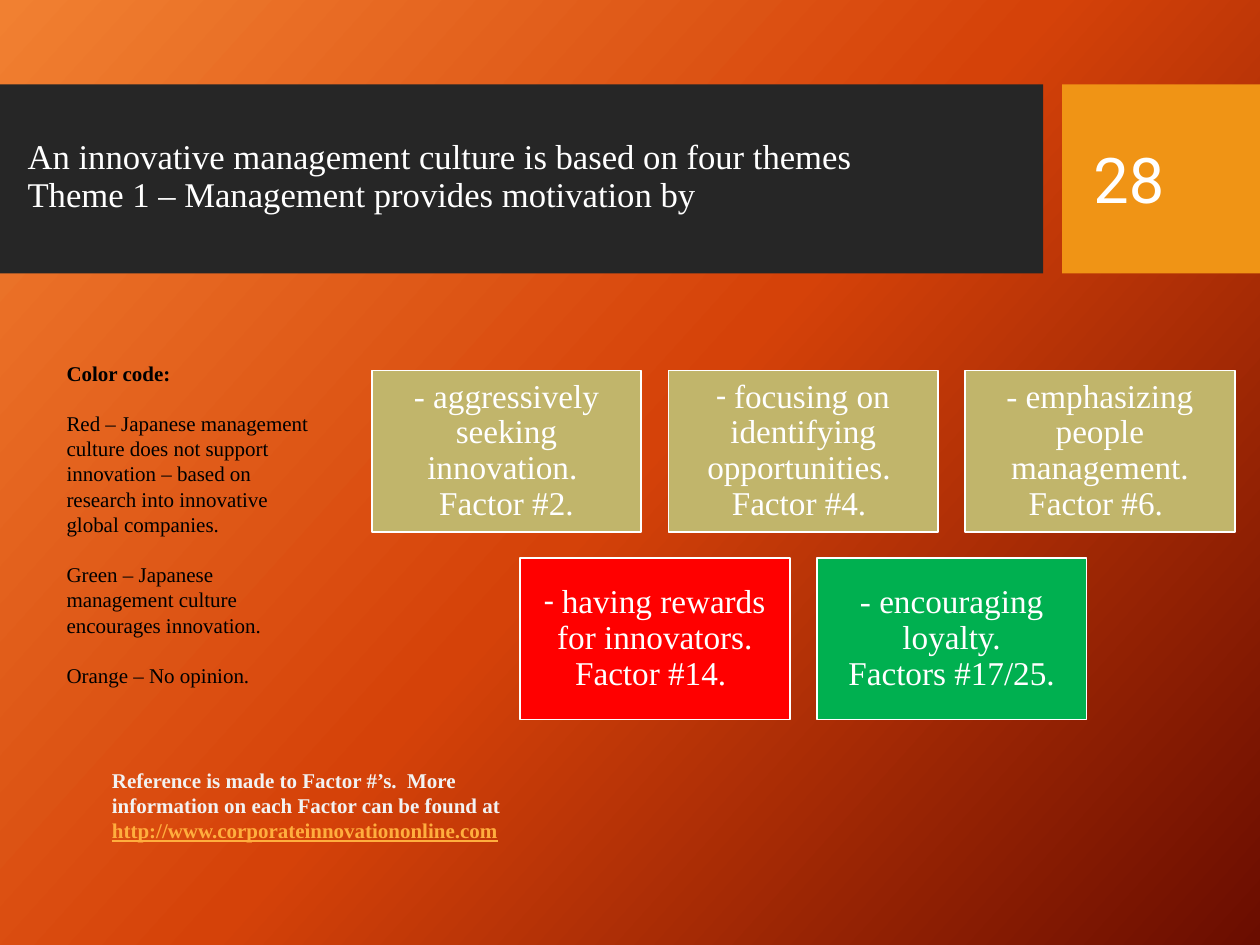
from copy import deepcopy
from pptx import Presentation
from pptx.dml.color import RGBColor
from pptx.enum.shapes import MSO_SHAPE
from pptx.enum.text import MSO_ANCHOR, PP_ALIGN
from pptx.util import Inches, Pt

# Content: a paragraph is a list of (text, style) runs
TITLE = [[("An innovative management culture is based on four themes\n"
           "Theme 1 – Management provides motivation by", "title")]]
NUMBER = [[("28", "number")]]
CODES = [
    [("Color code:", "head")],
    [("Red – Japanese management culture does not support innovation – "
      "based on research into innovative global companies.", "code")],
    [("Green – Japanese management culture encourages innovation.", "code")],
    [("Orange – No opinion.", "code")],
]
NOTE = [
    [("Reference is made to Factor #’s.  More information on each "
      "Factor can be found at", "note")],
    [("http://www.corporateinnovationonline.com", "web")],
]
FACTORS = [  # rows of (fill, dash style, text)
    [("neutral", "card", "aggressively seeking innovation. \nFactor #2."),
     ("neutral", "dash", "focusing on identifying opportunities. \nFactor #4. "),
     ("neutral", "card", "emphasizing people management. Factor #6. ")],
    [("against", "dash", "having rewards for innovators. Factor #14. "),
     ("favour", "card", "encouraging loyalty.\nFactors #17/25.")],
]

SERIF, SANS = "Times New Roman", "Roboto"
THEME = {
    "back": [(0, "F18031"), (0.5, "D54209"), (1, "6A0D00")],
    "fill": {"band": "262626", "tab": "F09415", "neutral": "C1B56B",
             "against": "FF0000", "favour": "00B050"},
    "edge": "FFFFFF",
    "type": {  # font, size, colour, other formats
        "title": (SERIF, 19.8, "FFFFFF", {}),
        "number": (SANS, 36, "FFFFFF", {}),
        "card": (SERIF, 19, "FFFFFF", {}),
        "dash": (SANS, 19, "FFFFFF", {}),
        "head": (SERIF, 12, "000000", {"bold": True}),
        "code": (SERIF, 12, "000000", {}),
        "note": (SERIF, 12, "F2F2F2", {"bold": True}),
        "web": (SERIF, 12, "FFAE3E", {"bold": True, "underline": True}),
    },
}


def rgb(code):
    return RGBColor.from_string(code)


def assign(item, values):
    for name, value in values.items():
        setattr(item, name, value)


def write(shape, paras, frame=None, para=None, gap=0):
    text = shape.text_frame
    assign(text, {"word_wrap": True, **(frame or {})})
    for i, runs in enumerate(paras):
        line = text.paragraphs[0] if i == 0 else text.add_paragraph()
        assign(line, {"space_before": Pt(gap if i else 0), **(para or {})})
        for words, style in runs:
            face, size, color, more = THEME["type"][style]
            for j, part in enumerate(words.split("\n")):
                if j:
                    line.add_line_break()
                run = line.add_run()
                run.text = part
                assign(run.font, {"name": face, "size": Pt(size), **more})
                run.font.color.rgb = rgb(color)


def block(area, fill, edge=None):
    shape = slide.shapes.add_shape(MSO_SHAPE.RECTANGLE, *map(Inches, area))
    shape.shadow.inherit = False
    shape.fill.solid()
    shape.fill.fore_color.rgb = rgb(THEME["fill"][fill])
    if edge:
        shape.line.color.rgb = rgb(edge)
        shape.line.width = Pt(1)
    else:
        shape.line.fill.background()
    return shape


def label(area, paras, **rules):
    box = slide.shapes.add_textbox(*map(Inches, area))
    write(box, paras, **rules)


deck = Presentation()
assign(deck, {"slide_width": Inches(10), "slide_height": Inches(7.5)})
slide = deck.slides.add_slide(deck.slide_layouts[6])

# Background: the default gradient has two stops, so one is added
back = slide.background.fill
back.gradient()
back.gradient_angle = 360 - 42
stops = slide.element.xpath(".//a:gsLst")[0]
stops.append(deepcopy(stops[-1]))
for stop, (place, color) in zip(back.gradient_stops, THEME["back"]):
    stop.position = place
    stop.color.rgb = rgb(color)

# Title band and number tab
block((0, 0.67, 8.28, 1.5), "band")
block((8.43, 0.67, 1.57, 1.5), "tab")
label((0.12, 1.11, 8.01, 1.1), TITLE, frame={"margin_top": 0},
      para={"line_spacing": 0.9})
label((8.58, 0.82, 1.27, 1.19), NUMBER,
      frame={"vertical_anchor": MSO_ANCHOR.MIDDLE})

# Factor cards: each row is centred under the widest one
LEFT, RIGHT, TOP, WIDE, HIGH, DROP = 2.95, 9.8, 2.94, 2.14, 1.28, 1.49
most = max(map(len, FACTORS))
step = (RIGHT - LEFT - WIDE) / (most - 1)
inset = {f"margin_{side}": Inches(0.08)
         for side in ("left", "top", "right", "bottom")}
for r, row in enumerate(FACTORS):
    start = LEFT + step * (most - len(row)) / 2
    for c, (fill, dash, words) in enumerate(row):
        card = block((start + c * step, TOP + r * DROP, WIDE, HIGH),
                     fill, THEME["edge"])
        write(card, [[("- ", dash), (words, "card")]],
              frame={"vertical_anchor": MSO_ANCHOR.MIDDLE, **inset},
              para={"alignment": PP_ALIGN.CENTER, "line_spacing": 0.9})

# Color code and reference
label((0.43, 2.81, 2.13, 3.13), CODES, gap=14.4)
label((0.79, 6.04, 3.54, 0.71), NOTE)

deck.save("out.pptx")
